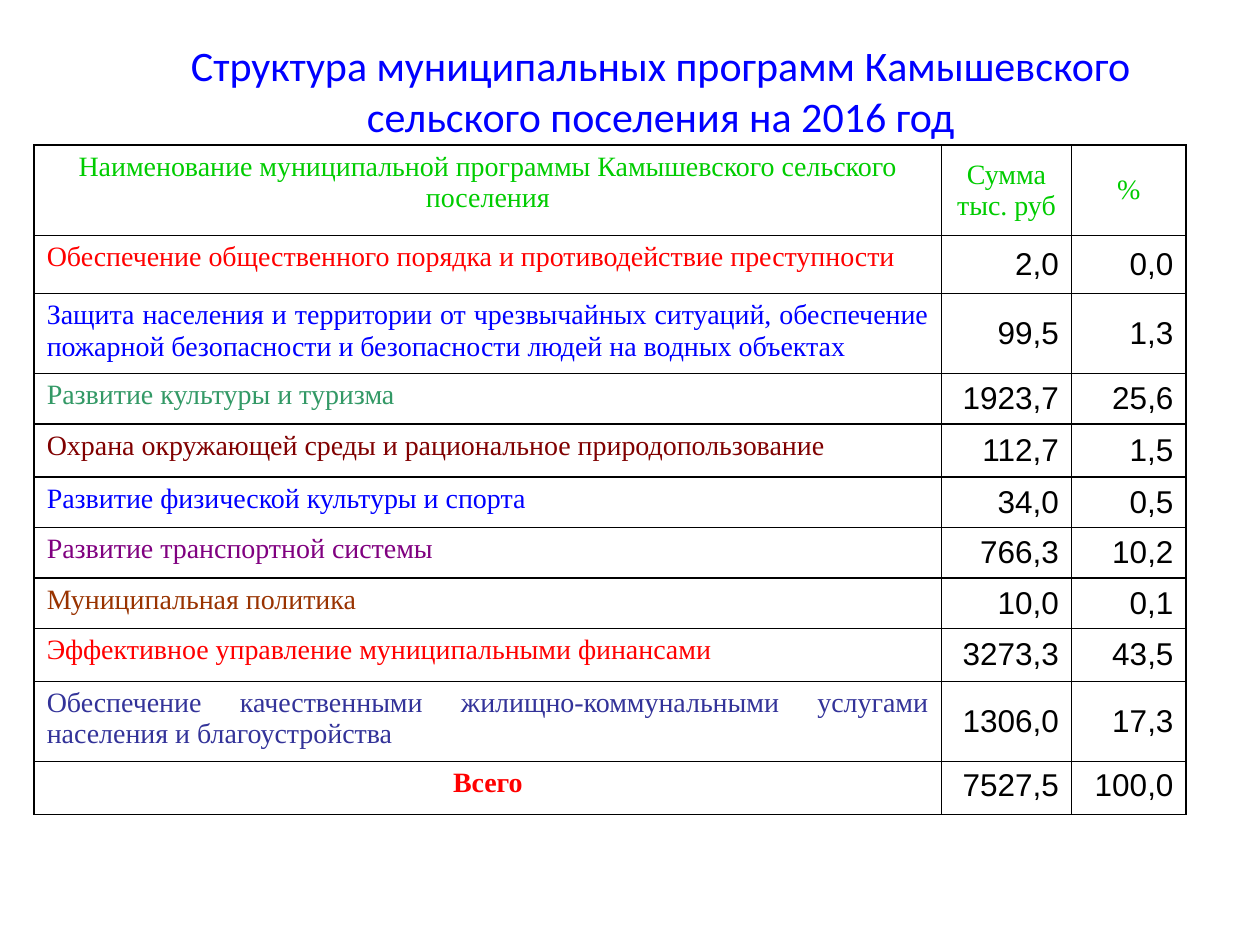
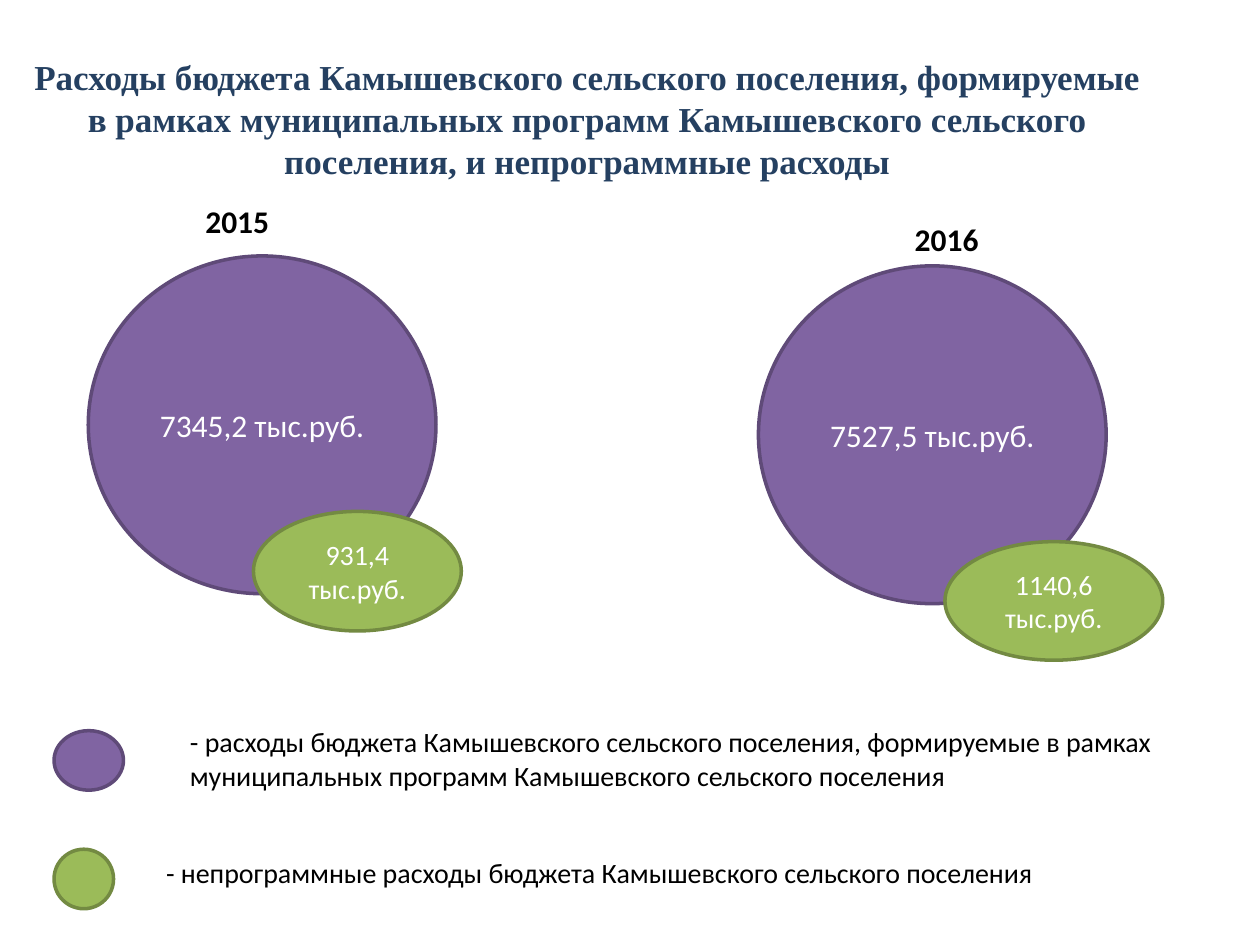
"""Build two slides on the municipal programme budget of a rural settlement."""
from dataclasses import dataclass

from lxml import etree
from pptx import Presentation
from pptx import util as u
from pptx.dml.color import RGBColor
from pptx.enum import shapes, text
from pptx.oxml.ns import qn

Cm = u.Cm
AL = text.PP_ALIGN
ANC = text.MSO_ANCHOR


@dataclass(frozen=True)
class Theme:
    """Colours, fonts and type sizes shared by the slides."""
    sans: str = "Calibri"
    serif: str = "Times New Roman"
    figures: str = "Arial"
    black: str = "000000"
    white: str = "FFFFFF"
    blue: str = "0000FF"
    red: str = "FF0000"
    header: str = "00CC00"
    navy: str = "254061"
    programme: tuple = ("8064A2", "5F4A78")
    other: tuple = ("9BBB59", "738A42")
    title: int = 24
    long_title: int = 20
    large: int = 18
    body: int = 16


T = Theme()

PROGRAMMES = [
    ("Обеспечение общественного порядка и противодействие преступности",
     "2,0", "0,0", T.red, 1.17),
    ("Защита населения и территории от чрезвычайных ситуаций, обеспечение пожарной "
     "безопасности и безопасности людей на водных объектах",
     "99,5", "1,3", T.blue, 1.51),
    ("Развитие культуры и туризма", "1923,7", "25,6", "339966", 0.95),
    ("Охрана окружающей среды и рациональное природопользование",
     "112,7", "1,5", "800000", 1.07),
    ("Развитие физической культуры и спорта", "34,0", "0,5", T.blue, 0.97),
    ("Развитие транспортной системы", "766,3", "10,2", "800080", 0.97),
    ("Муниципальная политика", "10,0", "0,1", "993300", 0.97),
    ("Эффективное управление муниципальными финансами",
     "3273,3", "43,5", T.red, 1.07),
    ("Обеспечение качественными жилищно-коммунальными услугами населения "
     "и благоустройства", "1306,0", "17,3", "333399", 1.51),
]


def rgb(value):
    """Turn a hex string into a colour."""
    return RGBColor.from_string(value)


def write(tf, content, size=T.body, font=T.sans, color=T.black, bold=False,
          align=AL.LEFT, anchor=ANC.TOP):
    """Fill a text frame, one paragraph per line of content."""
    tf.word_wrap = True
    tf.vertical_anchor = anchor
    for i, line in enumerate(content.split("\n")):
        p = tf.add_paragraph() if i else tf.paragraphs[0]
        p.alignment = align
        r = p.add_run()
        r.text = line
        r.font.size, r.font.name, r.font.bold = u.Pt(size), font, bold
        r.font.color.rgb = rgb(color)


def add_text(slide, box, content, **fmt):
    """Add a text box at box, given in centimetres."""
    sp = slide.shapes.add_textbox(*map(Cm, box))
    write(sp.text_frame, content, **fmt)


def add_title(slide, box, content, **fmt):
    """Add a centred slide title."""
    add_text(slide, box, content, align=AL.CENTER, anchor=ANC.MIDDLE, **fmt)


def add_ellipse(slide, box, colors, content="", size=T.body):
    """Add an outlined ellipse with an optional white caption."""
    sp = slide.shapes.add_shape(shapes.MSO_SHAPE.OVAL, *map(Cm, box))
    sp.shadow.inherit = False
    fill, line = colors
    sp.fill.solid()
    sp.fill.fore_color.rgb = rgb(fill)
    sp.line.color.rgb = rgb(line)
    sp.line.width = u.Pt(2)
    if content:
        write(sp.text_frame, content, size=size, color=T.white,
              align=AL.CENTER, anchor=ANC.MIDDLE)


def fill_cell(cell, content, anchor=ANC.MIDDLE, **fmt):
    """Write a table cell, rule its four sides and clear its fill."""
    write(cell.text_frame, content, **fmt)
    cell.vertical_anchor = anchor
    tcPr = cell._tc.get_or_add_tcPr()
    for side in ("a:lnL", "a:lnR", "a:lnT", "a:lnB"):
        ln = etree.SubElement(tcPr, qn(side), w=str(u.Pt(1)))
        solid = etree.SubElement(ln, qn("a:solidFill"))
        etree.SubElement(solid, qn("a:srgbClr"), val=T.black)
    cell.fill.background()


def add_programme_table(slide, left, top):
    """Add the table of programmes with its header and total rows."""
    widths = (18.29, 2.62, 2.31)
    heights = [1.83] + [row[-1] for row in PROGRAMMES] + [1.07]
    tb = slide.shapes.add_table(len(heights), len(widths), Cm(left), Cm(top),
                                Cm(sum(widths)), Cm(sum(heights))).table
    tb.first_row = tb.horz_banding = False
    for column, width in zip(tb.columns, widths):
        column.width = Cm(width)
    for row, height in zip(tb.rows, heights):
        row.height = Cm(height)

    heads = ("Наименование муниципальной программы Камышевского сельского поселения",
             "Сумма тыс. руб", "%")
    for col, head in enumerate(heads):
        fill_cell(tb.cell(0, col), head, font=T.serif, color=T.header,
                  align=AL.CENTER, anchor=ANC.MIDDLE if col else ANC.TOP)

    def add_row(row, name, figures, anchor=ANC.MIDDLE, **fmt):
        """Write a name and its right-aligned figures."""
        fill_cell(tb.cell(row, 0), name, font=T.serif, anchor=ANC.TOP, **fmt)
        for col, figure in enumerate(figures, 1):
            fill_cell(tb.cell(row, col), figure, size=T.large, font=T.figures,
                      align=AL.RIGHT, anchor=anchor)

    for row, (name, amount, share, color, _) in enumerate(PROGRAMMES, 1):
        add_row(row, name, (amount, share), color=color, align=AL.JUSTIFY)
    add_row(len(heights) - 1, "Всего", ("7527,5", "100,0"), anchor=ANC.TOP,
            color=T.red, bold=True, align=AL.CENTER)


def add_year(slide, left, top, year, label_at, programme, other, other_box):
    """Add a year's pair of ellipses; label and small ellipse are offset from it."""
    add_ellipse(slide, (left, top, 7.01, 6.81), T.programme, programme, T.large)
    dx, dy, width, height = other_box
    add_ellipse(slide, (left + dx, top + dy, width, height), T.other, other)
    dx, dy = label_at
    add_text(slide, (left + dx, top + dy, 2, 1.02), year, size=T.large, bold=True)


def add_legend_item(slide, left, top, width, colors, text_at, content):
    """Add a colour swatch with its explanation offset from it."""
    add_ellipse(slide, (left, top, width, 1.2), colors)
    dx, dy = text_at
    add_text(slide, (left + dx, top + dy, 20.19, 0.94), content)


def build_structure_slide(slide):
    """Lay out the slide with the programme table."""
    add_title(slide, (2.54, 0.71, 21.56, 2.21),
              "Структура муниципальных программ Камышевского сельского поселения "
              "на 2016 год", size=T.title, color=T.blue)
    add_programme_table(slide, 0.69, 2.92)


def build_spending_slide(slide):
    """Lay out the slide comparing the two years."""
    add_title(slide, (0.41, 0.79, 22.86, 3.18),
              "Расходы бюджета Камышевского сельского поселения, формируемые в рамках "
              "муниципальных программ Камышевского сельского поселения, "
              "и непрограммные расходы",
              size=T.long_title, font=T.serif, color=T.navy, bold=True)
    add_year(slide, 1.78, 5.16, "2015", (2.11, -1.22), "7345,2 тыс.руб.",
             "931,4 тыс.руб.", (3.33, 5.15, 4.19, 2.41))
    add_year(slide, 15.29, 5.36, "2016", (2.9, -1.04), "7527,5 тыс.руб.",
             "1140,6\nтыс.руб.", (3.76, 5.56, 4.39, 2.39))
    add_legend_item(slide, 1.09, 14.73, 1.4, T.programme, (2.49, -0.25),
                    "- расходы бюджета Камышевского сельского поселения, формируемые "
                    "в рамках муниципальных программ Камышевского сельского поселения")
    add_legend_item(slide, 1.09, 17.12, 1.2, T.other, (2.01, 0),
                    "- непрограммные расходы бюджета Камышевского сельского поселения")


def main():
    """Build and save the presentation."""
    prs = Presentation()
    prs.slide_width, prs.slide_height = Cm(25.4), Cm(19.05)
    for build in (build_structure_slide, build_spending_slide):
        build(prs.slides.add_slide(prs.slide_layouts[6]))
    prs.save("out.pptx")


if __name__ == "__main__":
    main()
